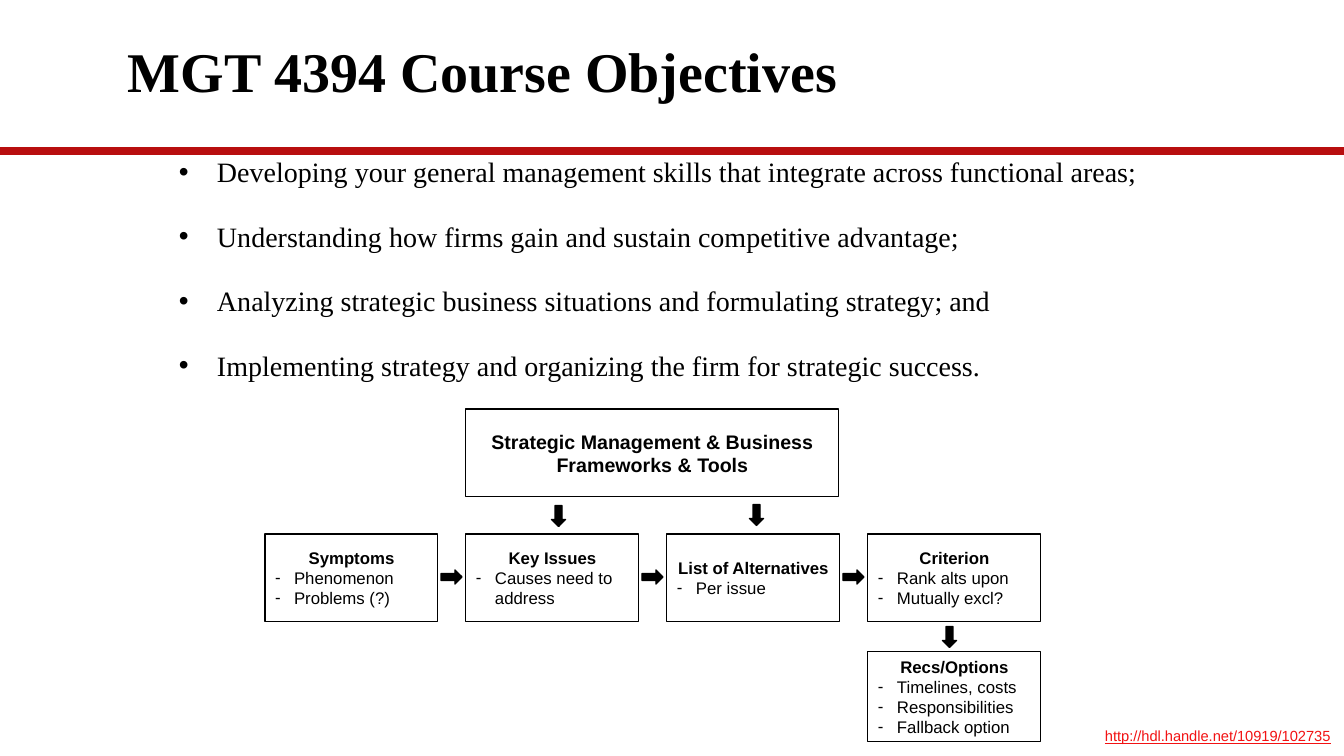
"""Build the course objectives slide with its strategy flow chart."""
from pptx import Presentation
from pptx import util as u
from pptx.dml.color import RGBColor
from pptx.enum import shapes, text
from pptx.oxml.ns import qn
from lxml import etree

THEME = {
    "ink": RGBColor.from_string("000000"),
    "rule": RGBColor.from_string("B80E0F"),
    "link": RGBColor.from_string("F21213"),
    "serif": "Times New Roman", "sans": "Arial",
    "title": 40, "body": 20, "tools": 14, "step": 12, "url": 10.5,
}
PX = 9144000 / 1008


def px(*sizes):
    return [u.Emu(round(size * PX)) for size in sizes]


def write(shape, rows, size, face, color="ink", anchor="MIDDLE", pad=5):
    frame = shape.text_frame
    frame.word_wrap = True
    frame.vertical_anchor = text.MSO_ANCHOR[anchor]
    frame.margin_left, frame.margin_top, frame.margin_right, frame.margin_bottom = px(10, pad, 10, pad)
    for i, (words, align, bullet, indent, hang, style) in enumerate(rows):
        para = frame.paragraphs[0] if i == 0 else frame.add_paragraph()
        para.alignment = text.PP_ALIGN[align]
        if bullet:
            props = para._p.get_or_add_pPr()
            props.set("marL", str(px(indent)[0]))
            props.set("indent", str(px(-hang)[0]))
            etree.SubElement(props, qn("a:buFont")).set("typeface", THEME["sans"])
            etree.SubElement(props, qn("a:buChar")).set("char", bullet)
        run = para.add_run()
        run.text = words
        look = {"name": THEME[face], "size": u.Pt(THEME[size]), "bold": False, **style}
        for key, val in look.items():
            setattr(run.font, key, val)
        run.font.color.rgb = THEME[color]
    return frame


BOLD = {"bold": True}
deck = Presentation()
deck.slide_width, deck.slide_height = px(1344, 756)
slide = deck.slides.add_slide(deck.slide_layouts[6])
items = slide.shapes

rule = items.add_connector(shapes.MSO_CONNECTOR.STRAIGHT, *px(0, 151, 1344, 151))
rule.line.color.rgb = THEME["rule"]
rule.line.width = u.Pt(6)
etree.SubElement(rule._element.spPr, qn("a:effectLst"))

title = items.add_textbox(*px(118, 14, 1109, 121))
frame = write(title, [("MGT 4394 Course Objectives", "LEFT", "", 0, 0, BOLD)], "title", "serif")
frame.paragraphs[0].line_spacing = 0.9

goals = [
    "Developing your general management skills that integrate across functional areas;",
    "Understanding how firms gain and sustain competitive advantage;",
    "Analyzing strategic business situations and formulating strategy; and",
    "Implementing strategy and organizing the firm for strategic success.",
]
body = items.add_textbox(*px(118, 150, 1109, 492))
rows = [(goal, "LEFT", "•", 89, 38, {}) for goal in goals]
frame = write(body, rows, "body", "serif", anchor="TOP")
for para in frame.paragraphs[1:]:
    para.space_before = u.Pt(22)

LEFT, STEP, WIDE = 265, 201, 173
steps = [
    (0, 534, 88, "Symptoms", ["Phenomenon", "Problems (?)"]),
    (1, 534, 88, "Key Issues", ["Causes need to address"]),
    (2, 534, 88, "List of Alternatives", ["Per issue"]),
    (3, 534, 88, "Criterion", ["Rank alts upon", "Mutually excl?"]),
    (3, 652, 90, "Recs/Options", ["Timelines, costs", "Responsibilities", "Fallback option"]),
]
boxes = [(LEFT + STEP * col, top, WIDE, high, head, notes, "step")
         for col, top, high, head, notes in steps]
boxes.append((LEFT + STEP, 409, 373, 88,
              "Strategic Management & Business Frameworks & Tools", [], "tools"))
for left, top, wide, high, head, notes, size in boxes:
    box = items.add_shape(shapes.MSO_SHAPE.RECTANGLE, *px(left, top, wide, high))
    box.shadow.inherit = False
    box.fill.background()
    box.line.color.rgb = THEME["ink"]
    box.line.width = u.Pt(0.75)
    rows = [(head, "CENTER", "", 0, 0, BOLD)]
    rows += [(note, "LEFT", "-", 19, 19, {}) for note in notes]
    write(box, rows, size, "sans")

arrows = [(441 + STEP * i, 570, 0) for i in range(3)]
arrows += [(939, 630, 90), (548, 509, 90), (746, 508, 90)]
for left, top, turn in arrows:
    arrow = items.add_shape(shapes.MSO_SHAPE.RIGHT_ARROW, *px(left, top, 21, 14))
    arrow.shadow.inherit = False
    arrow.rotation = turn
    arrow.fill.solid()
    arrow.fill.fore_color.rgb = arrow.line.color.rgb = THEME["ink"]
    arrow.line.width = u.Pt(1)

link = items.add_textbox(*px(1095, 718, 249, 38))
url = "http://hdl.handle.net/10919/102735"
write(link, [(url, "LEFT", "", 0, 0, {"underline": True})], "url", "sans", "link", "TOP", 10)

deck.save("out.pptx")
